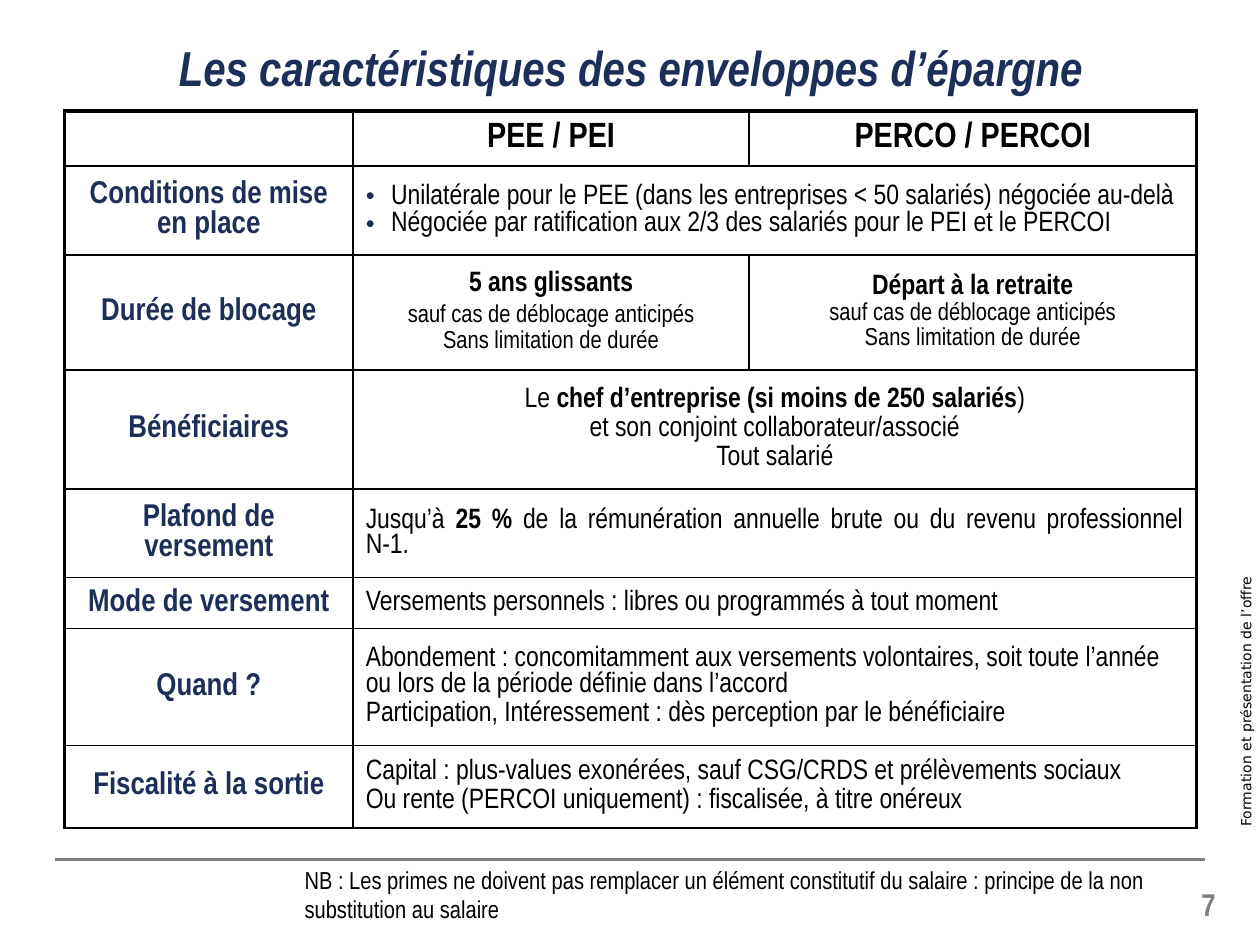
"""Build the slide comparing the features of the savings plans."""
import pptx
import pptx.dml.color
import pptx.enum.shapes
import pptx.enum.text
import pptx.oxml
import pptx.oxml.ns
import pptx.util

Cm = pptx.util.Cm
Pt = pptx.util.Pt
ALIGN = pptx.enum.text.PP_ALIGN
MIDDLE = pptx.enum.text.MSO_ANCHOR.MIDDLE
COLORS = {"navy": "1D2E58", "black": "000000", "gray": "808080", "white": "FFFFFF"}
COLUMN_WIDTHS = [5.82, 7.98, 9.02]
THIN, THICK = 1, 2.25

LEFT = {"before": 1.6}
CENTER = {"before": 1.6, "align": ALIGN.CENTER}
SMALL = {"before": 1.4, "align": ALIGN.CENTER, "size": 14}
HEADER = {"size": 20, "bold": True, "align": ALIGN.CENTER}
LABEL = {"size": 18, "bold": True, "align": ALIGN.CENTER, "color": "navy"}
BULLET = {"before": 1.6, "line_spacing": 0.95, "bullet": True}
JUSTIFIED = {"line_spacing": 0.95, "align": ALIGN.JUSTIFY}

ROWS = [
    (1.11, "", [[("PEE / PEI", HEADER)], [("PERCO / PERCOI", HEADER)]]),
    (1.79, "Conditions de mise en place", [[
        ("Unilatérale pour le PEE (dans les entreprises < 50 salariés) négociée au-delà", BULLET),
        ("Négociée par ratification aux 2/3 des salariés pour le PEI et le PERCOI", BULLET)]]),
    (2.32, "Durée de blocage", [
        [("**5 ans glissants**", CENTER),
         ("sauf cas de déblocage anticipés", {**SMALL, "before": 4}),
         ("Sans limitation de durée", SMALL)],
        [("**Départ à la retraite**", CENTER),
         ("sauf cas de déblocage anticipés", SMALL),
         ("Sans limitation de durée", SMALL)]]),
    (2.4, "Bénéficiaires", [[
        ("Le **chef d’entreprise (si moins de 250 salariés**)", CENTER),
        ("et son conjoint collaborateur/associé", CENTER),
        ("Tout salarié", CENTER)]]),
    (1.77, "Plafond de versement", [[
        ("Jusqu’à **25 %** de la rémunération annuelle brute ou du revenu professionnel N-1.",
         JUSTIFIED)]]),
    (1.03, "Mode de versement", [[
        ("Versements personnels : libres ou programmés à tout moment", LEFT)]]),
    (2.36, "Quand ?", [[
        ("Abondement : concomitamment aux versements volontaires, soit toute l’année "
         "ou lors de la période définie dans l’accord", LEFT),
        ("Participation, Intéressement : dès perception par le bénéficiaire", LEFT)]]),
    (1.65, "Fiscalité à la sortie", [[
        ("Capital : plus-values exonérées, sauf CSG/CRDS et prélèvements sociaux", LEFT),
        ("Ou rente (PERCOI uniquement) : fiscalisée, à titre onéreux", LEFT)]]),
]


def rgb(name):
    """Return the named colour."""
    return pptx.dml.color.RGBColor.from_string(COLORS[name])


def add_xml(parent, xml, position=None):
    """Add a drawing element, written without its namespace, to a parent."""
    tag, rest = xml[:-2].split(" ", 1) if " " in xml else (xml[:-2], "")
    element = pptx.oxml.parse_xml(f"<a:{tag} {pptx.oxml.ns.nsdecls('a')} {rest}/>")
    parent.insert(len(parent) if position is None else position, element)
    return element


def add_bullet(paragraph):
    """Give a paragraph a small navy bullet with a hanging indent."""
    properties = paragraph._p.get_or_add_pPr()
    properties.set("marL", str(Cm(0.51)))
    properties.set("indent", str(-Cm(0.51)))
    color = add_xml(properties, "buClr/>")
    add_xml(color, f'srgbClr val="{COLORS["navy"]}"/>')
    add_xml(properties, 'buSzPct val="90000"/>')
    add_xml(properties, 'buFont typeface="Arial"/>')
    add_xml(properties, 'buChar char="•"/>')


def add_text(frame, text, *, size=16, bold=False, italic=False, color="black",
             font="Arial Narrow", align=ALIGN.LEFT, before=0, line_spacing=None, bullet=False):
    """Write a paragraph, with bold parts between double asterisks."""
    paragraph = frame.paragraphs[0]
    if paragraph.runs:
        paragraph = frame.add_paragraph()
        paragraph.space_before = Pt(before)
    paragraph.alignment = align
    if line_spacing:
        paragraph.line_spacing = line_spacing
    if bullet:
        add_bullet(paragraph)
    for index, part in enumerate(text.split("**")):
        if part:
            run = paragraph.add_run()
            run.text = part
            run.font.name = font
            run.font.size = Pt(size)
            run.font.bold = bold or index % 2 == 1
            run.font.italic = italic
            run.font.color.rgb = rgb(color)


def add_box(slide, left, top, width, height, text, **text_format):
    """Add a wrapping text box holding one paragraph."""
    box = slide.shapes.add_textbox(Cm(left), Cm(top), Cm(width), Cm(height))
    box.text_frame.word_wrap = True
    add_text(box.text_frame, text, **text_format)
    return box


def add_rule(slide, left, right, top):
    """Add the horizontal gray line above the footer."""
    line = slide.shapes.add_connector(
        pptx.enum.shapes.MSO_CONNECTOR.STRAIGHT, Cm(left), Cm(top), Cm(right), Cm(top))
    line.line.color.rgb = rgb("gray")
    line.line.width = Pt(1.75)
    add_xml(line._element.spPr, "effectLst/>")


def set_borders(cell, **widths):
    """Draw the four black borders of a cell, given in points."""
    properties = cell._tc.get_or_add_tcPr()
    for position, side in enumerate("LRTB"):
        line = add_xml(properties, f'ln{side} w="{Pt(widths[side])}"/>', position)
        fill = add_xml(line, "solidFill/>")
        add_xml(fill, f'srgbClr val="{COLORS["black"]}"/>')


def add_features_table(slide, left, top):
    """Add the table of features, merging the cells common to both plans."""
    heights = [height for height, _, _ in ROWS]
    frame = slide.shapes.add_table(len(ROWS), len(COLUMN_WIDTHS), Cm(left), Cm(top),
                                   Cm(sum(COLUMN_WIDTHS)), Cm(sum(heights)))
    table = frame.table
    table.first_row = table.horz_banding = False
    for column, width in zip(table.columns, COLUMN_WIDTHS):
        column.width = Cm(width)
    for index, (height, label, contents) in enumerate(ROWS):
        table.rows[index].height = Cm(height)
        merged = len(contents) == 1
        if merged:
            table.cell(index, 1).merge(table.cell(index, 2))
        for position in range(len(COLUMN_WIDTHS)):
            cell = table.cell(index, position)
            cell.vertical_anchor = MIDDLE
            cell.fill.solid()
            cell.fill.fore_color.rgb = rgb("white")
            at_right = position == 2 or (merged and position == 1)
            set_borders(cell, L=THIN if position else THICK, R=THICK if at_right else THIN,
                        T=THIN if index else THICK, B=THIN)
        for position, paragraphs in enumerate([[(label, LABEL)]] + contents):
            for text, text_format in paragraphs:
                add_text(table.cell(index, position).text_frame, text, **text_format)


def main():
    """Build and save the presentation."""
    presentation = pptx.Presentation()
    presentation.slide_width, presentation.slide_height = Cm(25.4), Cm(19.05)
    slide = presentation.slides.add_slide(presentation.slide_layouts[6])
    add_rule(slide, 1.1, 24.3, 17.32)
    side_label = add_box(slide, 21.21, 12.73, 7.8, 0.58, "Formation et présentation de l’offre",
                         size=8, font="DejaVu Sans")
    side_label.rotation = 270
    number = add_box(slide, 23.29, 17.58, 1.47, 1.27, "7", size=18, bold=True,
                     color="gray", align=ALIGN.RIGHT)
    number.text_frame.vertical_anchor = MIDDLE
    title = add_box(slide, 0.71, 0.38, 24, 2.74, "Les caractéristiques des enveloppes d’épargne",
                    size=28, bold=True, italic=True, color="navy", align=ALIGN.CENTER)
    title.text_frame.margin_top = Cm(0.38)
    add_box(slide, 5.89, 17.32, 18.08, 1.45,
            "NB : Les primes ne doivent pas remplacer un élément constitutif du salaire : "
            "principe de la non substitution au salaire", size=14, line_spacing=Pt(16.6))
    add_features_table(slide, 1.3, 2.24)
    presentation.save("out.pptx")


if __name__ == "__main__":
    main()
